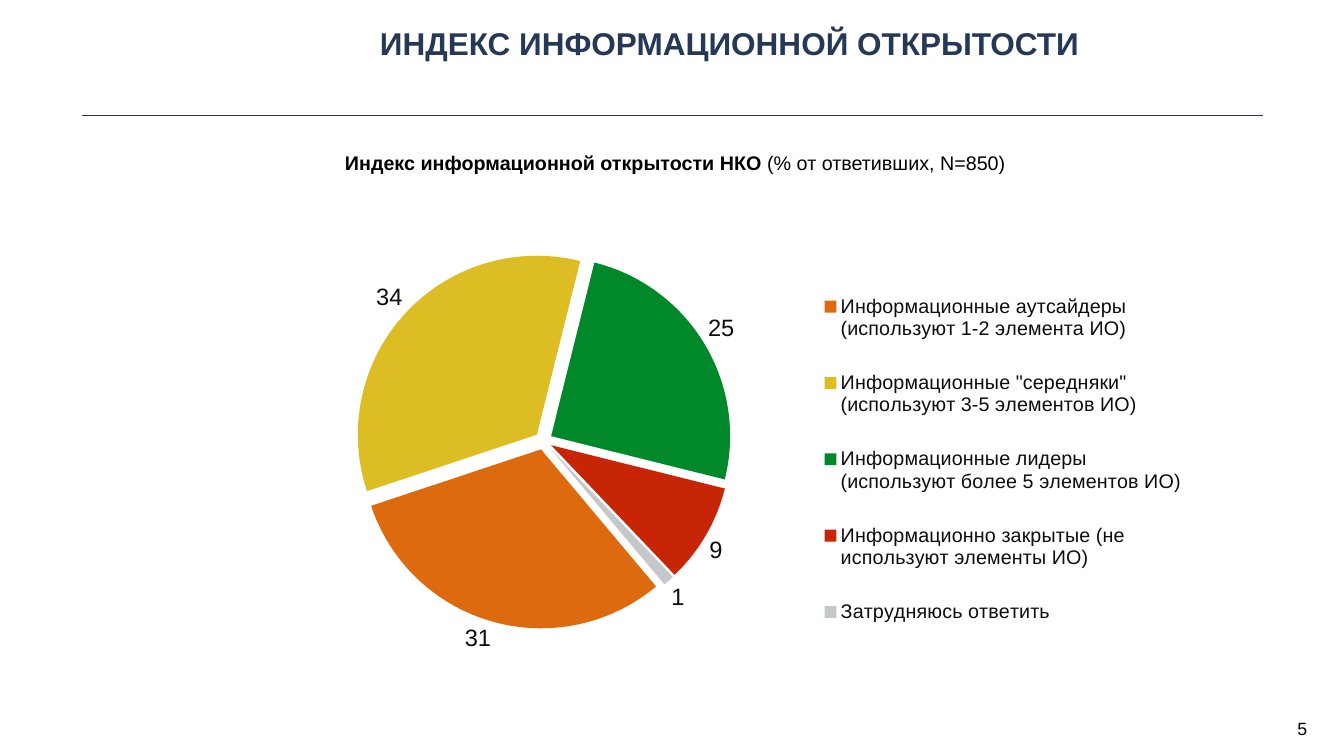
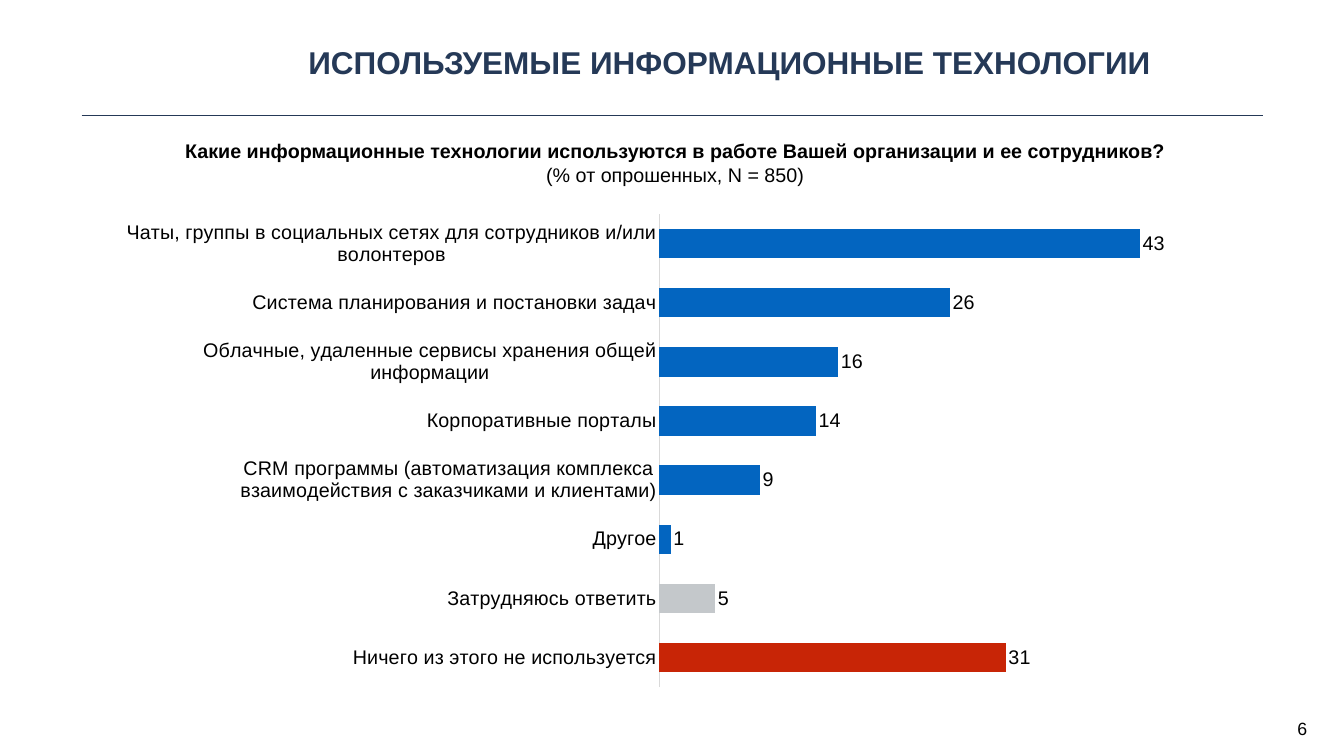
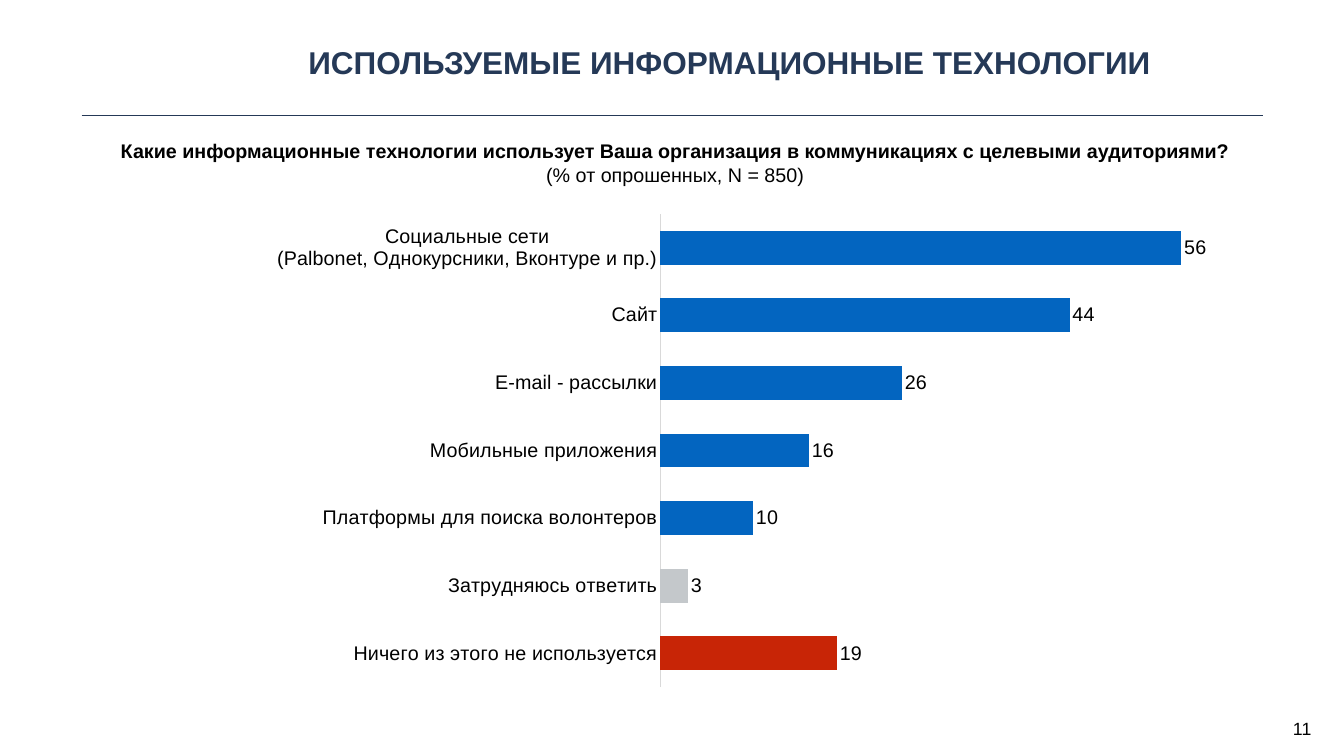
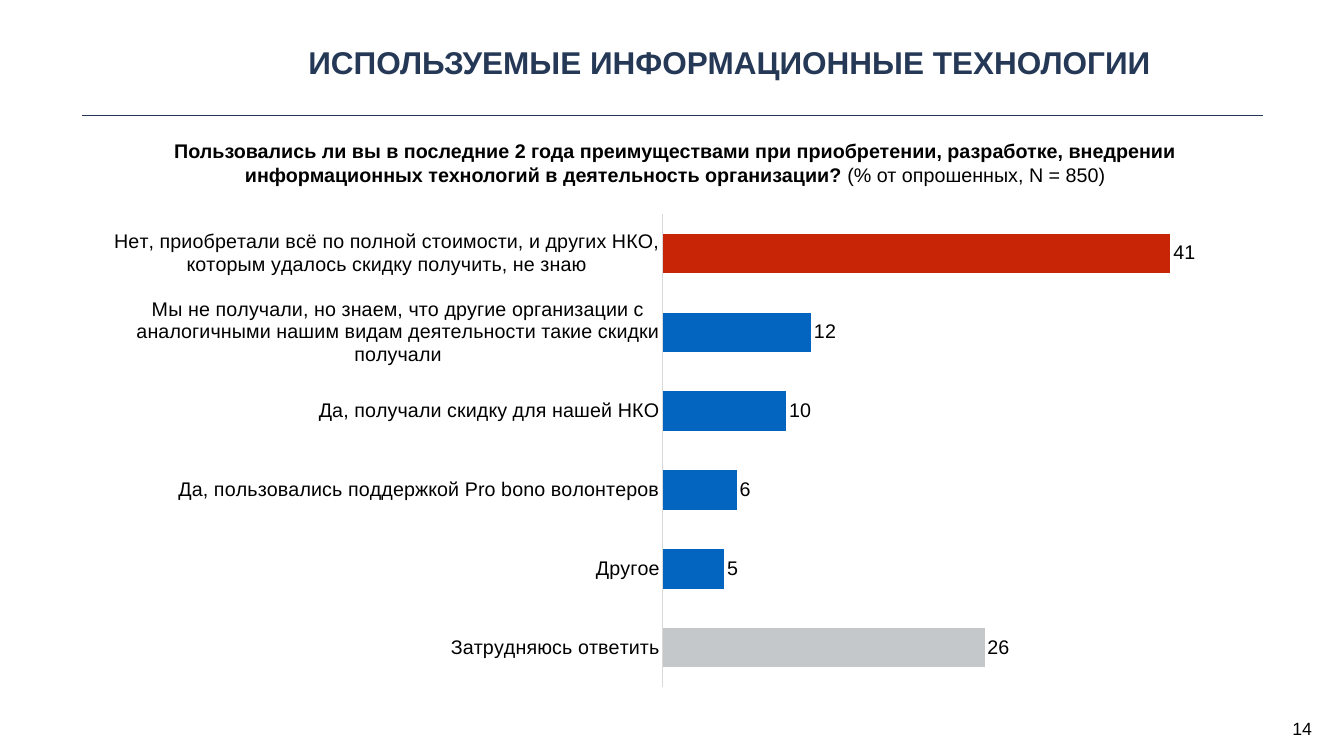
from lxml import etree
from pptx import Presentation
from pptx.chart.data import CategoryChartData
from pptx.dml.color import RGBColor
from pptx.enum.chart import (XL_CHART_TYPE, XL_LABEL_POSITION,
                             XL_LEGEND_POSITION, XL_TICK_MARK)
from pptx.enum.shapes import MSO_CONNECTOR
from pptx.enum.text import MSO_ANCHOR, PP_ALIGN
from pptx.oxml.ns import qn
from pptx.util import Inches, Pt

PIE, BAR = XL_CHART_TYPE.PIE, XL_CHART_TYPE.BAR_CLUSTERED
OUTSIDE = XL_LABEL_POSITION.OUTSIDE_END
LEGEND_RIGHT = XL_LEGEND_POSITION.RIGHT
NO_TICK = XL_TICK_MARK.NONE
STRAIGHT = MSO_CONNECTOR.STRAIGHT
CENTER, TOP, MIDDLE = PP_ALIGN.CENTER, MSO_ANCHOR.TOP, MSO_ANCHOR.MIDDLE

FONT = "Arial"
COLORS = {
    "navy": "253957", "black": "000000", "ink": "0D0D0D", "axis": "D9D9D9",
    "blue": "0365C0", "grey": "C4C8CB", "red": "C82506",
    "orange": "DE6A10", "yellow": "DCBD23", "green": "00882B",
}
TECH_TITLE = "ИСПОЛЬЗУЕМЫЕ ИНФОРМАЦИОННЫЕ ТЕХНОЛОГИИ"
SAMPLE = "(% от опрошенных, N = 850)"


def rgb(name):
    return RGBColor.from_string(COLORS[name])


def manual_layout(x, y, w, h, inner=False):
    """Return a c:layout element with fractions of the chart area."""
    layout = etree.Element(qn("c:layout"))
    manual = etree.SubElement(layout, qn("c:manualLayout"))
    values = [("layoutTarget", "inner")] if inner else []
    values += [("xMode", "edge"), ("yMode", "edge"),
               ("x", x), ("y", y), ("w", w), ("h", h)]
    for tag, val in values:
        etree.SubElement(manual, qn("c:" + tag)).set("val", str(val))
    return layout


class Deck:
    def __init__(self):
        self.prs = Presentation()
        self.prs.slide_width = Inches(18.96)
        self.prs.slide_height = Inches(10.67)
        self.s = None

    # Shared slide frame: rule, page number, title, question
    def slide(self, number, title, question, title_top=0.55):
        self.s = self.prs.slides.add_slide(self.prs.slide_layouts[6])
        self.rule(1.15, 17.82, 1.63)
        self.text((18.1, 10.07, 0.54, 0.42), [[(str(number), False)]], 18,
                  wrap=False, anchor=TOP)
        self.text((2.77, title_top, 15.05, 0.66), [[(title, True)]], 32, "navy")
        self.text((1.19, 1.88, 16.67, 0.83), question, 20, margins=(0.16, 0.08))

    def rule(self, x1, x2, y):
        line = self.s.shapes.add_connector(
            STRAIGHT, Inches(x1), Inches(y), Inches(x2), Inches(y))
        line.line.color.rgb = rgb("navy")
        line.line.width = Pt(1)
        etree.SubElement(line._element.spPr, qn("a:effectLst"))

    def text(self, box, lines, size, color="black", margins=(0.06, 0.06),
             wrap=True, anchor=MIDDLE):
        """Each line is a list of (text, bold) runs."""
        tf = self.s.shapes.add_textbox(*map(Inches, box)).text_frame
        tf.word_wrap = wrap
        tf.vertical_anchor = anchor
        tf.margin_left = tf.margin_right = Inches(margins[0])
        tf.margin_top = tf.margin_bottom = Inches(margins[1])
        for i, runs in enumerate(lines):
            p = tf.add_paragraph() if i else tf.paragraphs[0]
            p.alignment = CENTER
            for content, bold in runs:
                r = p.add_run()
                r.text = content
                r.font.name, r.font.size, r.font.bold = FONT, Pt(size), bold
                r.font.color.rgb = rgb(color)

    def style_font(self, font, size, color):
        font.name, font.size = FONT, Pt(size)
        font.color.rgb = rgb(color)

    def chart(self, kind, box, rows, plot_box, color, label_size):
        """Each row is (category, value, colour)."""
        data = CategoryChartData()
        data.categories = [row[0] for row in rows]
        data.add_series("Series 1", [row[1] for row in rows])
        chart = self.s.shapes.add_chart(kind, *map(Inches, box), data).chart
        chart.has_title = chart.has_legend = False
        self.style_font(chart.font, 20, color)

        area = chart._chartSpace.chart.plotArea
        for old in area.findall(qn("c:layout")):
            area.remove(old)
        area.insert(0, manual_layout(*plot_box, inner=True))

        plot = chart.plots[0]
        plot.vary_by_categories = False
        series = plot.series[0]
        for i, row in enumerate(rows):
            fill = series.points[i].format.fill
            fill.solid()
            fill.fore_color.rgb = rgb(row[2])
        labels = series.data_labels
        labels.show_value = True
        labels.position = OUTSIDE
        self.style_font(labels.font, label_size, color)
        return chart

    def pie(self, box, rows, plot_box, legend_box, start, explosion):
        chart = self.chart(PIE, box, rows, plot_box, "ink", 24)
        plot = chart.plots[0]
        plot.vary_by_categories = True
        series = plot.series[0]
        series.format.line.fill.background()
        gap = etree.Element(qn("c:explosion"))
        gap.set("val", str(explosion))
        series._element.find(qn("c:spPr")).addnext(gap)
        angle = etree.SubElement(plot._element, qn("c:firstSliceAng"))
        angle.set("val", str(start))

        chart.has_legend = True
        legend = chart.legend
        legend.position = LEGEND_RIGHT
        legend.include_in_layout = False
        self.style_font(legend.font, 20, "ink")
        legend._element.find(qn("c:legendPos")).addnext(
            manual_layout(*legend_box))

    def bars(self, left, rows, maximum):
        chart = self.chart(BAR, (left, 2.88, 15.76, 6.96), rows,
                           (0.49, 0.02, 0.5, 0.96), "black", 20)
        chart.plots[0].gap_width = 100
        cat = chart.category_axis
        cat.reverse_order = True
        cat.has_major_gridlines = False
        cat.major_tick_mark = cat.minor_tick_mark = NO_TICK
        cat.format.line.color.rgb = rgb("axis")
        cat.format.line.width = Pt(0.75)
        val = chart.value_axis
        val.has_major_gridlines = False
        val.minimum_scale, val.maximum_scale = 0, maximum
        val.visible = False


def main():
    deck = Deck()

    # Openness index
    deck.slide(5, "ИНДЕКС ИНФОРМАЦИОННОЙ ОТКРЫТОСТИ",
               [[("Индекс информационной открытости НКО ", True),
                 ("(% от ответивших, N=850)", False)]], title_top=0.28)
    deck.pie((1.58, 2.3, 15.81, 7.47), [
        ("Информационные аутсайдеры (используют 1-2 элемента ИО)", 31, "orange"),
        ('Информационные "середняки" (используют 3-5 элементов ИО)', 34, "yellow"),
        ("Информационные лидеры (используют более 5 элементов ИО)", 25, "green"),
        ("Информационно закрытые (не используют элементы ИО)", 9, "red"),
        ("Затрудняюсь ответить", 1, "grey"),
    ], (0, 0.17, 0.77, 0.71), (0.63, 0.19, 0.33, 0.74), start=140, explosion=5)

    # Technologies used at work
    deck.slide(6, TECH_TITLE, [
        [("Какие информационные технологии используются в работе "
          "Вашей организации и ее сотрудников?", True)],
        [(SAMPLE, False)]])
    deck.bars(1.58, [
        ("Чаты, группы в социальных сетях для сотрудников и/или волонтеров",
         43, "blue"),
        ("Система планирования и постановки задач", 26, "blue"),
        ("Облачные, удаленные сервисы хранения общей информации", 16, "blue"),
        ("Корпоративные порталы", 14, "blue"),
        ("CRM программы (автоматизация комплекса взаимодействия "
         "с заказчиками и клиентами)", 9, "blue"),
        ("Другое", 1, "blue"),
        ("Затрудняюсь ответить", 5, "grey"),
        ("Ничего из этого не используется", 31, "red"),
    ], 50)

    # Technologies for reaching audiences
    deck.slide(11, TECH_TITLE, [
        [("Какие информационные технологии использует Ваша организация "
          "в коммуникациях с целевыми аудиториями?", True)],
        [(SAMPLE, False)]])
    deck.bars(1.59, [
        ("Социальные сети\n(Palbonet, Однокурсники, Вконтуре и пр.)", 56, "blue"),
        ("Сайт", 44, "blue"),
        ("E-mail - рассылки", 26, "blue"),
        ("Мобильные приложения", 16, "blue"),
        ("Платформы для поиска волонтеров", 10, "blue"),
        ("Затрудняюсь ответить", 3, "grey"),
        ("Ничего из этого не используется", 19, "red"),
    ], 60)

    # Discounts and support
    deck.slide(14, TECH_TITLE, [
        [("Пользовались ли вы в последние 2 года преимуществами при "
          "приобретении, разработке, внедрении информационных технологий "
          "в деятельность организации? ", True), (SAMPLE, False)]])
    deck.bars(1.61, [
        ("Нет, приобретали всё по полной стоимости, и других НКО, "
         "которым удалось скидку получить, не знаю", 41, "red"),
        ("Мы не получали, но знаем, что другие организации с аналогичными "
         "нашим видам деятельности такие скидки получали", 12, "blue"),
        ("Да, получали скидку для нашей НКО", 10, "blue"),
        ("Да, пользовались поддержкой Pro bono волонтеров", 6, "blue"),
        ("Другое", 5, "blue"),
        ("Затрудняюсь ответить", 26, "grey"),
    ], 45)

    deck.prs.save("out.pptx")


if __name__ == "__main__":
    main()
